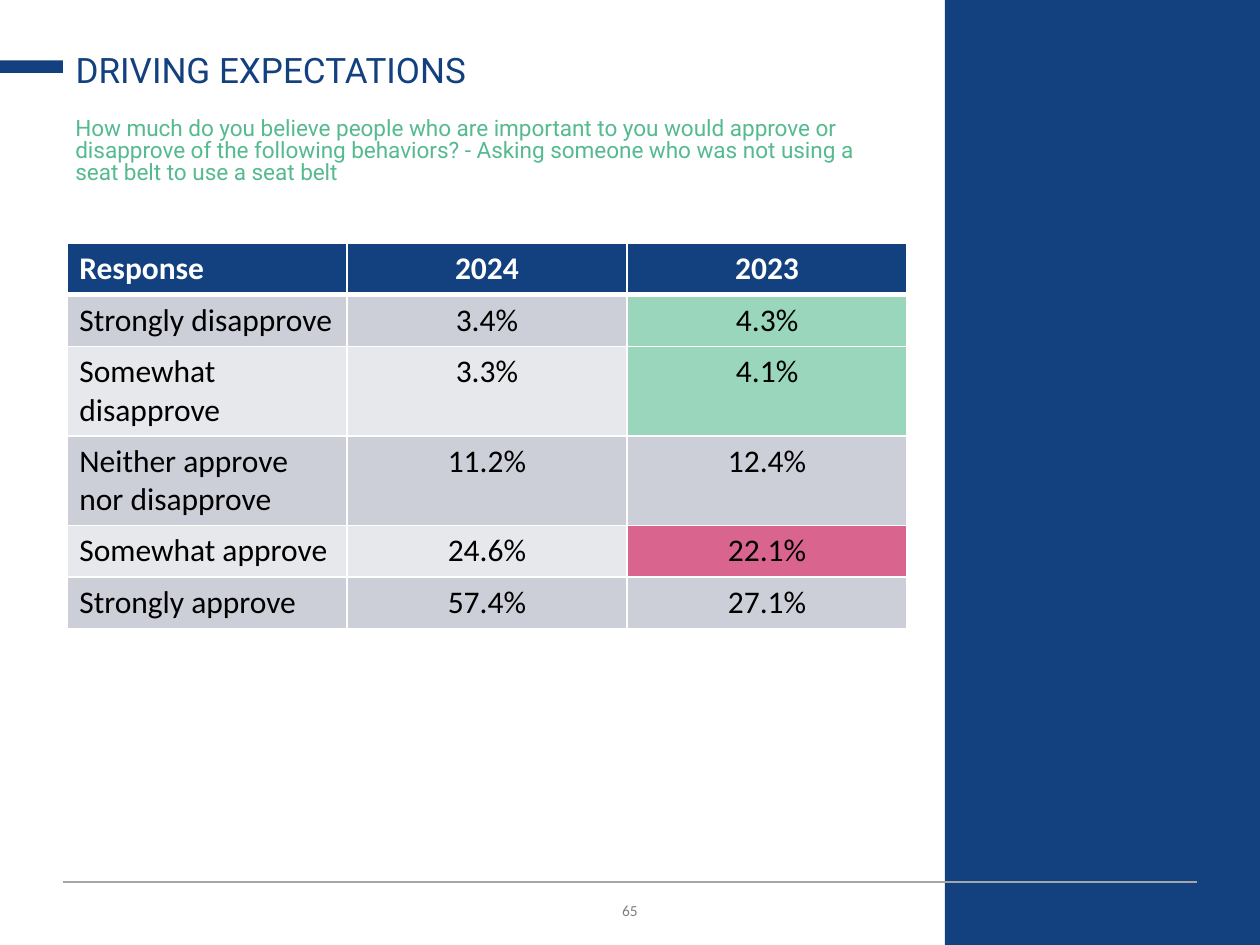
from dataclasses import dataclass

from lxml.etree import SubElement
from pptx import Presentation
from pptx.dml.color import RGBColor
from pptx.enum.shapes import MSO_CONNECTOR, MSO_SHAPE
from pptx.enum.text import MSO_ANCHOR, MSO_AUTO_SIZE, PP_ALIGN
from pptx.oxml.ns import qn
from pptx.util import Inches, Pt


@dataclass(frozen=True)
class Theme:
    navy: str = "13407E"
    green: str = "55BA8F"
    rule: str = "A6A6A6"
    gray: str = "808080"
    white: str = "FFFFFF"
    black: str = "000000"
    bands: tuple = ("CCCFD8", "E7E8EC")
    mint: str = "99D6BC"
    pink: str = "D9648D"
    head: str = "Roboto"
    body: str = "Calibri"
    title: float = 20
    ask: float = 12.9
    cell: float = 18
    page: float = 11


THEME = Theme()

ROWS = [
    ("Response", "2024", "2023"),
    ("Strongly disapprove", "3.4%", "4.3%"),
    ("Somewhat disapprove", "3.3%", "4.1%"),
    ("Neither approve nor disapprove", "11.2%", "12.4%"),
    ("Somewhat approve", "24.6%", "22.1%"),
    ("Strongly approve", "57.4%", "27.1%"),
]
MARKS = {(1, 2): THEME.mint, (2, 2): THEME.mint, (4, 2): THEME.pink}


def color(code):
    return RGBColor.from_string(code)


def box(*sides):
    return [Inches(side) for side in sides]


def write(frame, text, *, size, tint, font=THEME.body, bold=False,
          align=PP_ALIGN.LEFT, space=None, caps=False):
    para = frame.paragraphs[0]
    para.alignment = align
    para.line_spacing = space
    run = para.add_run()
    run.text = text
    run.font.name = font
    run.font.size = Pt(size)
    run.font.bold = bold
    run.font.color.rgb = color(tint)
    if caps:
        run.font._element.set("cap", "small")


def setup(frame, anchor):
    frame.word_wrap = True
    frame.auto_size = MSO_AUTO_SIZE.NONE
    frame.vertical_anchor = anchor
    return frame


def add_text(slide, text, place, anchor=MSO_ANCHOR.TOP, **style):
    shape = slide.shapes.add_textbox(*box(*place))
    write(setup(shape.text_frame, anchor), text, **style)


def add_title(slide, text, place):
    title = slide.shapes.title
    title.left, title.top, title.width, title.height = box(*place)
    write(setup(title.text_frame, MSO_ANCHOR.BOTTOM), text, space=0.9,
          size=THEME.title, tint=THEME.navy, font=THEME.head)


def add_bar(slide, place):
    bar = slide.shapes.add_shape(MSO_SHAPE.RECTANGLE, *box(*place))
    bar.shadow.inherit = False
    bar.fill.solid()
    bar.fill.fore_color.rgb = color(THEME.navy)
    bar.line.fill.background()


def add_rule(slide, ends):
    rule = slide.shapes.add_connector(MSO_CONNECTOR.STRAIGHT, *box(*ends))
    rule.line.color.rgb = color(THEME.rule)
    rule.line.width = Pt(0.75)
    SubElement(rule._element.spPr, qn("a:effectLst"))


def add_edges(cell, widths):
    """Draw white borders; widths gives points for each of L, R, T, B."""
    props = cell._tc.get_or_add_tcPr()
    for side, width in widths.items():
        edge = SubElement(props, qn(f"a:ln{side}"), w=str(Pt(width)))
        fill = SubElement(edge, qn("a:solidFill"))
        SubElement(fill, qn("a:srgbClr"), val=THEME.white)


def add_grid(slide, rows, marks, place):
    grid = slide.shapes.add_table(len(rows), len(rows[0]), *box(*place)).table
    for r, row in enumerate(rows):
        head = r == 0
        for c, text in enumerate(row):
            cell = grid.cell(r, c)
            add_edges(cell, {"L": 1, "R": 1, "T": 3 if r == 1 else 1,
                             "B": 3 if head else 1})
            band = THEME.navy if head else THEME.bands[(r - 1) % 2]
            cell.fill.solid()
            cell.fill.fore_color.rgb = color(marks.get((r, c), band))
            write(cell.text_frame, text, size=THEME.cell, bold=head,
                  tint=THEME.white if head else THEME.black,
                  align=PP_ALIGN.CENTER if c else PP_ALIGN.LEFT)


def main():
    deck = Presentation()
    deck.slide_width, deck.slide_height = box(10, 7.5)
    slide = deck.slides.add_slide(deck.slide_layouts[5])

    add_text(slide, "65", (0.5, 7.06, 9, 0.3), MSO_ANCHOR.MIDDLE,
             size=THEME.page, tint=THEME.gray, align=PP_ALIGN.CENTER,
             caps=True)
    add_bar(slide, (7.5, 0, 2.5, 7.5))
    add_rule(slide, (0.5, 7, 9.5, 7))
    add_bar(slide, (0, 0.48, 0.5, 0.1))
    add_text(slide, "How much do you believe people who are important to you "
             "would approve or disapprove of the following behaviors? - "
             "Asking someone who was not using a seat belt to use a seat belt",
             (0.5, 0.9, 6.7, 0.67), size=THEME.ask, tint=THEME.green,
             font=THEME.head, space=0.8)
    add_title(slide, "DRIVING EXPECTATIONS", (0.5, 0.29, 6.7, 0.48))
    add_grid(slide, ROWS, MARKS, (0.53, 1.93, 6.67, 0.41 * len(ROWS)))

    deck.save("out.pptx")


if __name__ == "__main__":
    main()
